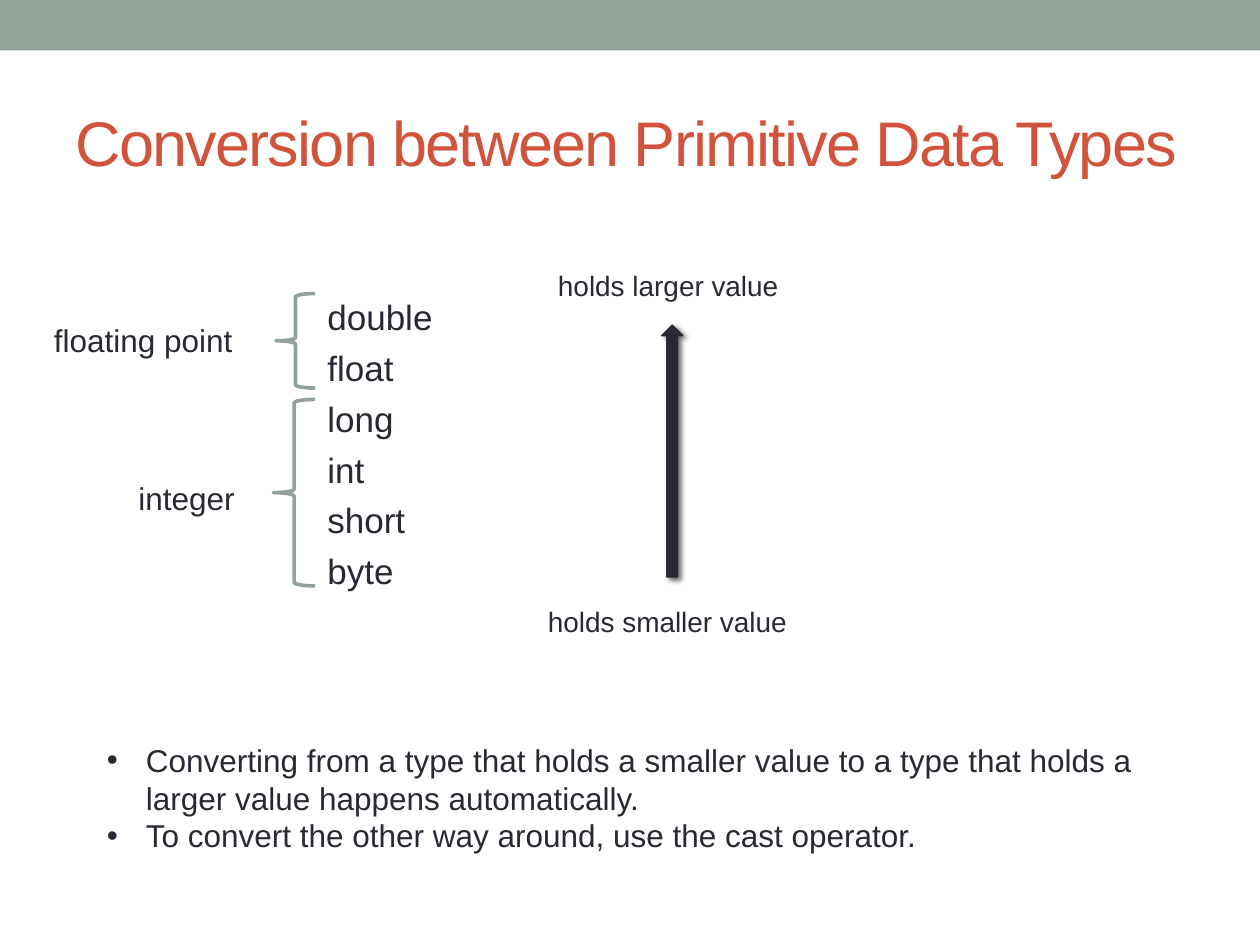
from lxml import etree
from pptx import Presentation
from pptx.dml.color import RGBColor
from pptx.enum.shapes import MSO_SHAPE
from pptx.enum.text import MSO_ANCHOR
from pptx.oxml import parse_xml
from pptx.oxml.ns import nsdecls, qn
from pptx.util import Inches, Pt

RECT, UP_ARROW, BRACE = MSO_SHAPE.RECTANGLE, MSO_SHAPE.UP_ARROW, MSO_SHAPE.LEFT_BRACE
TOP, MIDDLE = MSO_ANCHOR.TOP, MSO_ANCHOR.MIDDLE
FONT = "Arial"
COLORS = {"band": "93A299", "title": "D2533C", "ink": "292934", "shadow": "000000"}
WIDTH, HEIGHT = 10, 7.5

TITLE = "Conversion between Primitive Data Types"
TYPES = ["double", "float", "long", "int", "short", "byte"]
LABELS = [  # text, size, box
    ("holds larger value", 16, (4.33, 2.08, 2.25, 0.37)),
    ("holds smaller value", 16, (4.25, 4.75, 2.5, 0.37)),
    ("floating point", 18, (0.33, 2.5, 1.83, 0.4)),
    ("integer", 18, (1, 3.75, 1.08, 0.4)),
]
BRACES = [(2.19, 2.33, 0.31, 0.75), (2.17, 3.17, 0.33, 1.48)]
NOTES = [
    "Converting from a type that holds a smaller value to a type that holds a "
    "larger value happens automatically.",
    "To convert the other way around, use the cast operator.",
]


def rgb(name):
    return RGBColor.from_string(COLORS[name])


def add_shape(slide, kind, box, fill=None, line=None, weight=0.75):
    sp = slide.shapes.add_shape(kind, *map(Inches, box))
    sp.shadow.inherit = False
    if fill:
        sp.fill.solid()
        sp.fill.fore_color.rgb = rgb(fill)
    else:
        sp.fill.background()
    if line:
        sp.line.color.rgb = rgb(line)
        sp.line.width = Pt(weight)
    else:
        sp.line.fill.background()
    return sp


def add_shadow(sp, blur, distance, angle, opacity):
    """Fill the shape's empty effect list; points, degrees and percent."""
    effects = sp._element.spPr.find(qn("a:effectLst"))
    effects.append(parse_xml(
        f'<a:outerShdw {nsdecls("a")} blurRad="{Pt(blur)}" dist="{Pt(distance)}" '
        f'dir="{angle * 60000}" algn="tl" rotWithShape="0">'
        f'<a:srgbClr val="{COLORS["shadow"]}"><a:alpha val="{opacity * 1000}"/>'
        f'</a:srgbClr></a:outerShdw>'))


def add_bullet(p, indent):
    pPr = p._p.get_or_add_pPr()
    pPr.set("marL", str(Inches(indent)))
    pPr.set("indent", str(-Inches(indent)))
    etree.SubElement(pPr, qn("a:buFont"), typeface=FONT)
    etree.SubElement(pPr, qn("a:buChar"), char="•")


def add_text(slide, lines, box, size, color="ink", anchor=TOP, gap=0,
             tracking=0, bullet_indent=0):
    """Add one paragraph per line; gap and tracking are in points."""
    tf = slide.shapes.add_textbox(*map(Inches, box)).text_frame
    tf.word_wrap = True
    tf.vertical_anchor = anchor
    for i, line in enumerate(lines):
        p = tf.paragraphs[0] if i == 0 else tf.add_paragraph()
        p.space_before = Pt(gap if i else 0)
        if bullet_indent:
            add_bullet(p, bullet_indent)
        r = p.add_run()
        r.text = line
        r.font.name, r.font.size = FONT, Pt(size)
        r.font.color.rgb = rgb(color)
        if tracking:
            r.font._element.set("spc", str(tracking * 100))


def main():
    prs = Presentation()
    prs.slide_width, prs.slide_height = Inches(WIDTH), Inches(HEIGHT)
    slide = prs.slides.add_slide(prs.slide_layouts[6])

    add_shape(slide, RECT, (0, 0, WIDTH, 0.4), fill="band")
    add_text(slide, [TITLE], (0.5, 0.58, 9, 1.08), 36, color="title",
             anchor=MIDDLE, tracking=-1)

    arrow = add_shape(slide, UP_ARROW, (5.25, 2.58, 0.17, 2), fill="ink", line="ink")
    add_shadow(arrow, blur=3, distance=2, angle=45, opacity=60)

    add_text(slide, TYPES, (2.5, 2.3, 1.83, 2.4), 20, gap=5)
    for box in BRACES:
        add_shape(slide, BRACE, box, line="band", weight=2.08)
    for text, size, box in LABELS:
        add_text(slide, [text], box, size)
    add_text(slide, NOTES, (0.75, 5.83, 8.67, 1.01), 18, bullet_indent=0.31)

    prs.save("out.pptx")


if __name__ == "__main__":
    main()
